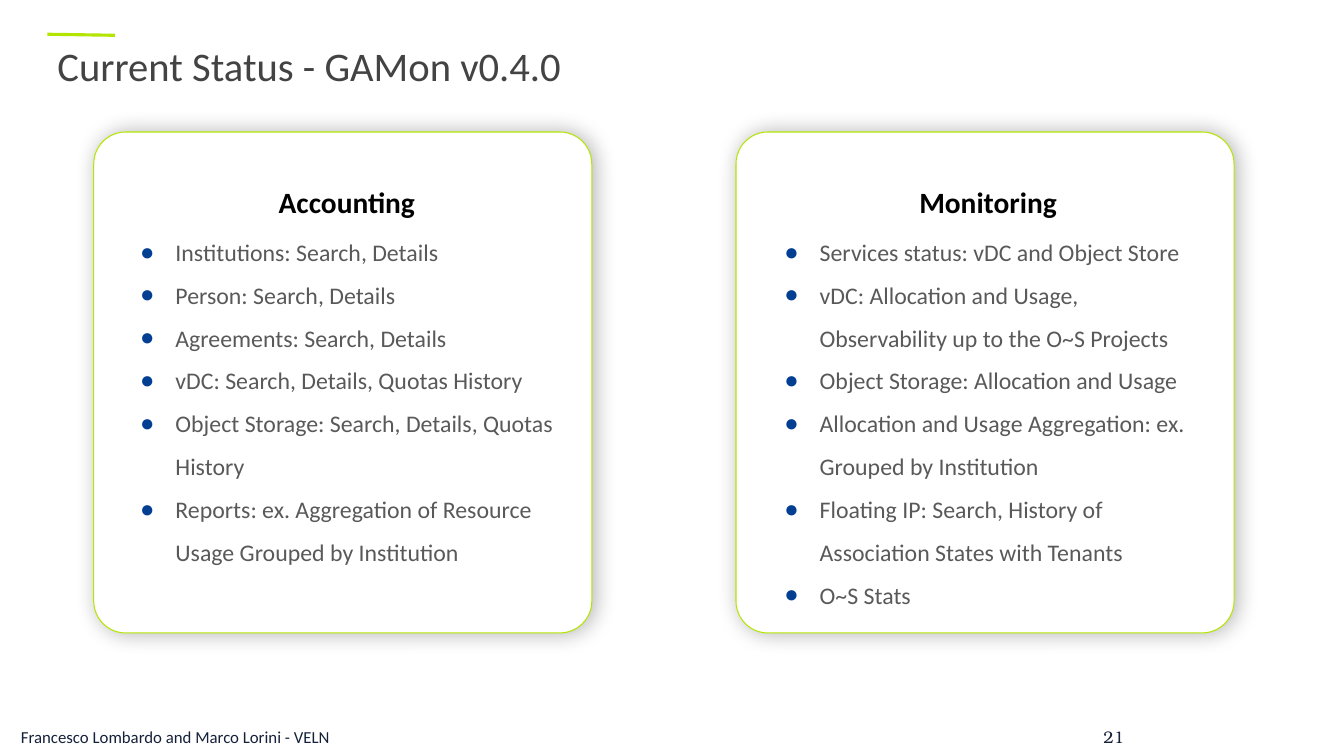
from lxml.etree import SubElement
from pptx import Presentation
from pptx.dml.color import RGBColor
from pptx.enum.shapes import MSO_CONNECTOR, MSO_SHAPE
from pptx.enum.text import MSO_ANCHOR, MSO_AUTO_SIZE, PP_ALIGN
from pptx.oxml.ns import qn
from pptx.util import Pt

SCALE = 9144
WHITE = RGBColor(0xFF, 0xFF, 0xFF)
BLACK = RGBColor(0x00, 0x00, 0x00)
LIME = RGBColor(0xB4, 0xE4, 0x02)
BLUE = RGBColor(0x02, 0x3E, 0x91)
NAVY = RGBColor(0x15, 0x21, 0x39)
GREY = RGBColor(0x59, 0x59, 0x59)
DARK = RGBColor(0x43, 0x43, 0x43)

ACCOUNT = [
    "Institutions: Search, Details",
    "Person: Search, Details",
    "Agreements: Search, Details",
    "vDC: Search, Details, Quotas History",
    "Object Storage: Search, Details, Quotas History",
    "Reports: ex. Aggregation of Resource Usage Grouped by Institution",
]
MONITOR = [
    "Services status: vDC and Object Store",
    "vDC: Allocation and Usage,",
    "Observability up to the O~S Projects",
    "Object Storage: Allocation and Usage",
    "Allocation and Usage Aggregation: ex. Grouped by Institution",
    "Floating IP: Search, History of Association States with Tenants",
    "O~S Stats",
]
PLAIN = {"Observability up to the O~S Projects"}


def px(*nums):
    """Turn px lengths into EMU."""
    return [num * SCALE for num in nums]


def place(shape, box):
    """Move a shape to a box of left, top, width and height."""
    shape.left, shape.top, shape.width, shape.height = px(*box)


def style(para, size, color, face="Calibri", bold=False):
    """Set the font of a paragraph."""
    font = para.font
    font.size, font.name, font.bold = Pt(size), face, bold
    font.color.rgb = color


def setup(frame, pad, anchor):
    """Set wrapping, insets and anchor of a text frame."""
    frame.word_wrap = True
    frame.auto_size = MSO_AUTO_SIZE.NONE
    frame.vertical_anchor = anchor
    frame.margin_left, frame.margin_right = px(10, 10)
    frame.margin_top, frame.margin_bottom = px(pad, pad)


def bullet(para, left, hang, mark):
    """Set the indents and the bullet of a paragraph."""
    props = para._p.get_or_add_pPr()
    props.set("marL", str(left * SCALE))
    props.set("indent", str(-hang * SCALE))
    if mark:
        tint = SubElement(props, qn("a:buClr"))
        SubElement(tint, qn("a:srgbClr"), val=str(BLUE))
        SubElement(props, qn("a:buChar"), char=mark)
    else:
        SubElement(props, qn("a:buNone"))


def shade(shape):
    """Give a shape a soft dark glow to its right."""
    shape.shadow.inherit = False
    effect = shape._element.spPr.find(qn("a:effectLst"))
    glow = SubElement(effect, qn("a:outerShdw"), blurRad=str(Pt(15.8)),
                      dist=str(Pt(2.2)), dir="0", algn="ctr", rotWithShape="0")
    tint = SubElement(glow, qn("a:srgbClr"), val=str(BLACK))
    SubElement(tint, qn("a:alpha"), val="29000")


def panel(slide, box, body, inner, head, items):
    """Draw a rounded card with a heading and a bullet list."""
    card = slide.shapes.add_shape(MSO_SHAPE.ROUNDED_RECTANGLE, *px(*box))
    card.adjustments[0] = 0.064
    card.fill.solid()
    card.fill.fore_color.rgb = WHITE
    card.line.color.rgb = LIME
    card.line.width = Pt(0.75)
    shade(card)
    slide.shapes._spTree.insert(2, card._element)

    left, top, wide, high = inner
    place(body, (box[0] + left, box[1] + top, wide, high))
    frame = body.text_frame
    setup(frame, 3, MSO_ANCHOR.TOP)
    para = frame.paragraphs[0]
    para.text = head
    bullet(para, 0, 0, None)
    para.alignment = PP_ALIGN.CENTER
    para.line_spacing = 1.35
    para.space_before = Pt(0)
    style(para, 21, BLACK, bold=True)
    for rank, item in enumerate(items):
        para = frame.add_paragraph()
        para.text = item
        if item in PLAIN:
            bullet(para, 50, 0, None)
        else:
            bullet(para, 50, 35, "●")
        para.line_spacing = 1.5
        para.space_before = Pt(0 if rank else 3)
        style(para, 17, GREY)


def header(slide, box):
    """Place the title and the accent line above it."""
    left, top = box[:2]
    line = slide.shapes.add_connector(
        MSO_CONNECTOR.STRAIGHT, *px(left + 67, top, left, top - 1))
    line.line.color.rgb = LIME
    line.line.width = Pt(2.25)
    SubElement(line._element.spPr, qn("a:effectLst"))
    title = slide.shapes.title
    place(title, box)
    setup(title.text_frame, 5, MSO_ANCHOR.MIDDLE)
    para = title.text_frame.paragraphs[0]
    para.text = "Current Status - GAMon v0.4.0"
    para.alignment = PP_ALIGN.LEFT
    para.line_spacing = 0.9
    style(para, 29, DARK)


def label(slide, box, text, face, align):
    """Add one small line of footer text."""
    note = slide.shapes.add_textbox(*px(*box))
    setup(note.text_frame, 5, MSO_ANCHOR.MIDDLE)
    para = note.text_frame.paragraphs[0]
    para.text = text
    para.alignment = align
    style(para, 12, NAVY, face)
    return note


def footer(slide, box):
    """Place the authors and the page number in the bottom strip."""
    left, top, wide, high = box
    names = label(slide, (left, top, 336, high),
                  "Francesco Lombardo and Marco Lorini - VELN",
                  "Calibri", PP_ALIGN.LEFT)
    names.fill.solid()
    names.fill.fore_color.rgb = WHITE
    label(slide, (left + wide - 46, top, 46, high), "21",
          "TeX Gyre Bonum", PP_ALIGN.RIGHT)


def main():
    """Build the slide and save it."""
    deck = Presentation()
    deck.slide_width, deck.slide_height = px(1333, 750)
    slide = deck.slides.add_slide(deck.slide_layouts[3])
    first, second = list(slide.placeholders)[1:]
    header(slide, (47, 35, 875, 65))
    panel(slide, (93, 131, 494, 497), first, (21, 36, 460, 366),
          "Accounting", ACCOUNT)
    panel(slide, (730, 131, 494, 497), second, (23, 36, 454, 415),
          "Monitoring", MONITOR)
    footer(slide, (11, 712, 1114, 38))
    deck.save("out.pptx")


if __name__ == "__main__":
    main()
